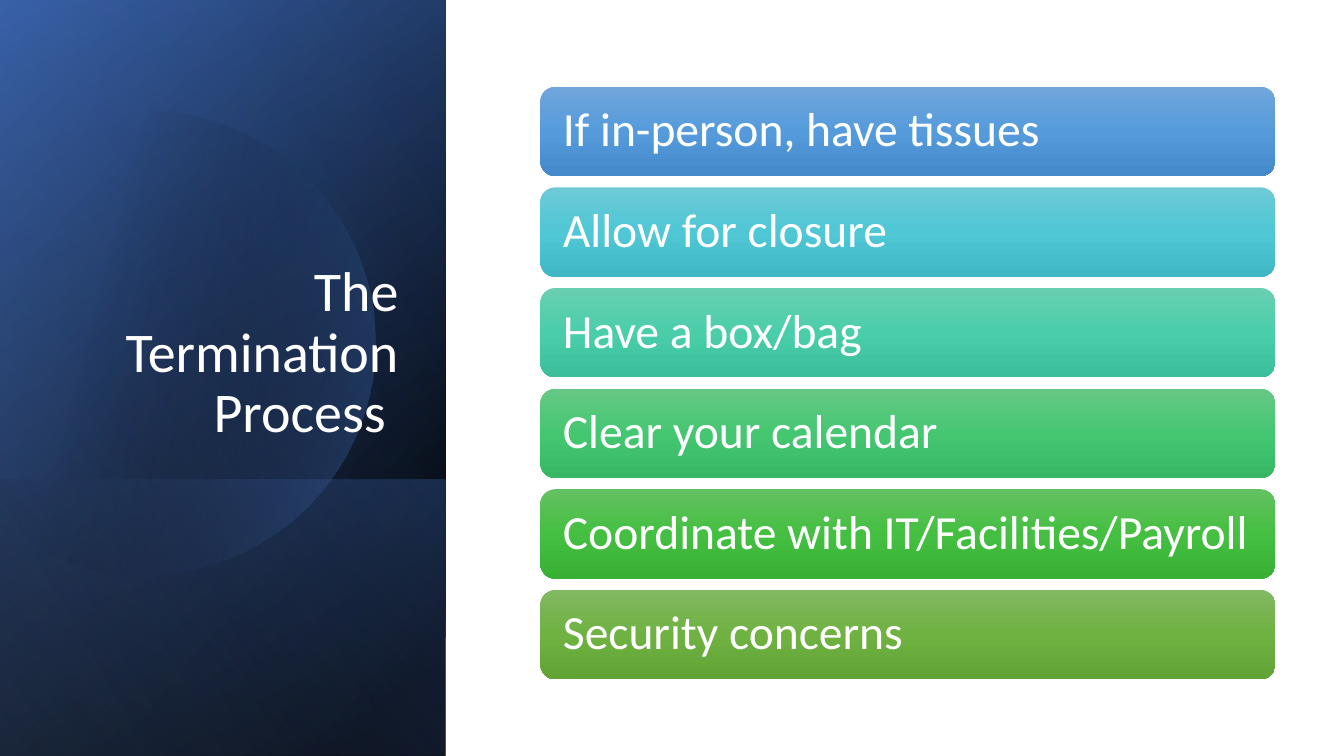
from math import acos, cos, sin, pi
from lxml.etree import SubElement
from pptx import Presentation
from pptx.dml.color import RGBColor
from pptx.enum.shapes import MSO_SHAPE
from pptx.enum.text import MSO_ANCHOR, PP_ALIGN
from pptx.oxml.ns import qn
from pptx.util import Inches, Pt

WHITE = "FFFFFF"
BARS = [
    ("If in-person, have tissues", ("71A6DB", "559BDB", "448ACA")),
    ("Allow for closure", ("6DCAD5", "4FC7D5", "3FB7C4")),
    ("Have a box/bag", ("69CFB1", "4ACEAA", "3BBE9A")),
    ("Clear your calendar", ("66C885", "45C772", "37B764")),
    ("Coordinate with IT/Facilities/Payroll", ("64C162", "44BF41", "37B034")),
    ("Security concerns", ("81B861", "6FB242", "62A336")),
]


def color(code):
    return RGBColor.from_string(code)


def blend(shape, stops, angle):
    shape.shadow.inherit = False
    shape.line.fill.background()
    shape.fill.gradient()
    grad = shape._element.spPr.find(qn("a:gradFill"))
    for child in list(grad):
        grad.remove(child)
    grad.set("rotWithShape", "1")
    group = SubElement(grad, qn("a:gsLst"))
    for place, code, alpha in stops:
        stop = SubElement(group, qn("a:gs"), pos=str(place * 1000))
        tint = SubElement(stop, qn("a:srgbClr"), val=str(color(code)))
        if alpha < 100:
            SubElement(tint, qn("a:alpha"), val=str(alpha * 1000))
    SubElement(grad, qn("a:lin"), ang=str(angle * 60000), scaled="0")


def write(frame, text, size, align):
    frame.word_wrap = True
    para = frame.paragraphs[0]
    para.alignment = align
    para.line_spacing = 0.9
    run = para.add_run()
    run.text = text
    run.font.name = "Calibri"
    run.font.size = Pt(size)
    run.font.color.rgb = color(WHITE)


def add_panel(slide, left, top, width, height, stops, angle):
    panel = slide.shapes.add_shape(
        MSO_SHAPE.RECTANGLE,
        Inches(left + (width - height) / 2), Inches(top + (height - width) / 2),
        Inches(height), Inches(width))
    panel.rotation = 90
    panel._element.spPr.find(qn("a:xfrm")).set("flipH", "1")
    blend(panel, stops, angle)


def add_disc(slide, left, mid_x, mid_y, radius):
    edge = acos((left - mid_x) / radius)
    steps = 120
    turns = [-edge + 2 * edge * i / steps for i in range(steps + 1)]
    points = [(Inches(mid_x + radius * cos(t)), Inches(mid_y + radius * sin(t)))
              for t in turns]
    path = slide.shapes.build_freeform(*points[0])
    path.add_line_segments(points[1:], close=True)
    blend(path.convert_to_shape(), [(29, "000000", 0), (100, "4472C4", 43)], 14)


def add_side(slide, left, top, width, height):
    box = (left, top, width, height)
    foot = 2.74
    add_panel(slide, *box, [(8, "000000", 100), (100, "2F5597", 100)], 50)
    add_panel(slide, *box, [(0, "000000", 0), (99, "4472C4", 46)], 30)
    add_panel(slide, left, top + height - foot, width, foot,
              [(2, "4472C4", 29), (100, "000000", 30)], 130)
    add_disc(slide, left, left + 1.42, top + 3.4, 2.3)
    add_panel(slide, *box, [(0, "000000", 0), (99, "8FAADC", 11)], 120)
    title = slide.shapes.add_textbox(
        Inches(left + 0.64), Inches(top + 1.84), Inches(3.41), Inches(2.62))
    title.text_frame.vertical_anchor = MSO_ANCHOR.BOTTOM
    write(title.text_frame, "The Termination Process ", 40, PP_ALIGN.RIGHT)


def add_bars(slide, left, top, width, height):
    gap = 0.11
    tall = (height - gap * (len(BARS) - 1)) / len(BARS)
    for i, (text, codes) in enumerate(BARS):
        bar = slide.shapes.add_shape(
            MSO_SHAPE.ROUNDED_RECTANGLE, Inches(left),
            Inches(top + i * (tall + gap)), Inches(width), Inches(tall))
        blend(bar, [(n * 50, code, 100) for n, code in enumerate(codes)], 90)
        frame = bar.text_frame
        frame.margin_left = frame.margin_right = Inches(0.18)
        frame.vertical_anchor = MSO_ANCHOR.MIDDLE
        write(frame, text, 34, PP_ALIGN.LEFT)


def main():
    deck = Presentation()
    deck.slide_width = Inches(13.33)
    deck.slide_height = Inches(7.5)
    slide = deck.slides.add_slide(deck.slide_layouts[6])
    add_side(slide, 0, 0, 4.42, 7.5)
    add_bars(slide, 5.36, 0.86, 7.29, 5.88)
    deck.save("out.pptx")


if __name__ == "__main__":
    main()
